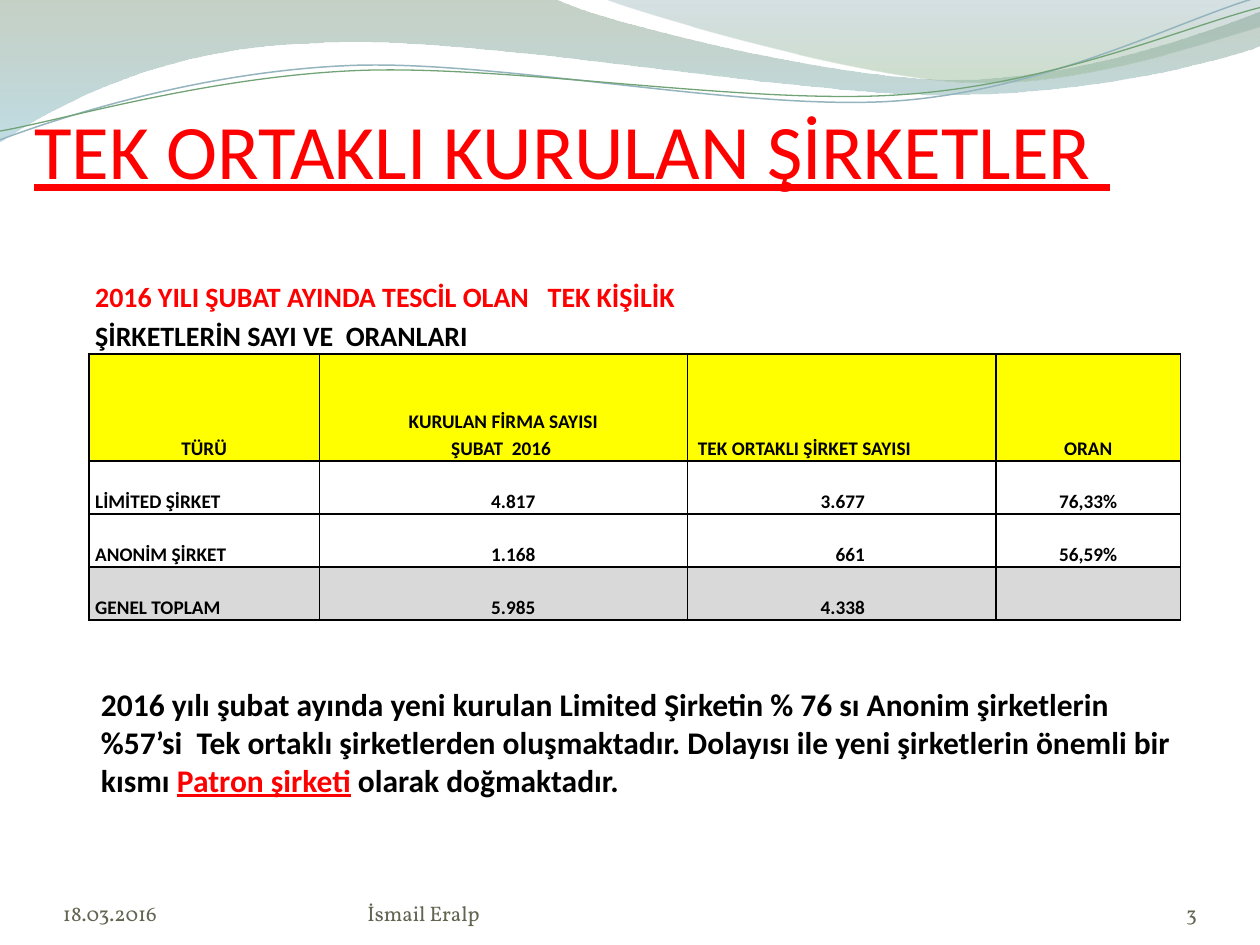
import math

import pptx
import pptx.dml.color
import pptx.enum.text
import pptx.oxml
import pptx.oxml.ns
import pptx.util

RGB = pptx.dml.color.RGBColor
ALIGN = pptx.enum.text.PP_ALIGN
ANCHOR = pptx.enum.text.MSO_ANCHOR
FIT = pptx.enum.text.MSO_AUTO_SIZE
A_NS = pptx.oxml.ns.nsdecls("a")

RED = RGB(0xFF, 0x00, 0x00)
BLACK = RGB(0x00, 0x00, 0x00)
YELLOW = RGB(0xFF, 0xFF, 0x00)
GREY = RGB(0xD9, 0xD9, 0xD9)
OLIVE = RGB(0x62, 0x65, 0x51)
SAGE = RGB(0x80, 0x99, 0x80)
SKY = RGB(0x8D, 0xC1, 0xCF)
STEEL = RGB(0x77, 0x9B, 0xA4)
MINT = RGB(0x96, 0xB9, 0x96)
PALE_BLUE = RGB(0x94, 0xB5, 0xBE)
GREEN = RGB(0x72, 0xA3, 0x76)

deck = pptx.Presentation()
deck.slide_width = pptx.util.Inches(10)
deck.slide_height = pptx.util.Inches(7.5)
slide = deck.slides.add_slide(deck.slide_layouts[5])

# Grid of 100 columns by 75 rows
COL = deck.slide_width // 100
ROW = deck.slide_height // 75


def box(left, top, width, height):
    return [round(n) for n in (left * COL, top * ROW, width * COL, height * ROW)]


def add_run(paragraph, text, size, color, font="Calibri", bold=False, underline=False):
    run = paragraph.add_run()
    run.text = text
    run.font.size = pptx.util.Pt(size)
    run.font.name = font
    run.font.bold = bold
    run.font.underline = underline
    run.font.color.rgb = color


# Waves: two numbers make a straight side, six make a Bezier curve
broad_wave = [
    (0, 0), (44, -0.1), (47.6, 1.7, 66.4, 6.3, 75.8, 6.3),
    (85.3, 6.3, 95.8, 2.6, 100, 0.9), (100.1, 3.6),
    (98.3, 4.4, 87, 7.6, 74.6, 7.5), (62.2, 7.5, 38.2, 2.8, 25.7, 3.4),
    (12.9, 3.6, 4.6, 8.3, -0.1, 11.3),
]
right_wave = [
    (47.9, -0.1), (50.9, 1.1, 68.2, 6.2, 76.9, 6.5),
    (85.6, 6.9, 96.1, 3.2, 100, 2.1), (100, 0),
]
blue_thread = [
    (0, 11.1), (4.8, 9.3, 15.8, 5.7, 27.7, 5.2),
    (39.5, 4.7, 59.3, 8.9, 71.3, 8), (83.3, 7.1, 93.8, 1.5, 99.8, -0.2),
]
green_thread = [
    (0, 10.4), (4.7, 9.6, 16.4, 6.1, 28.3, 5.6),
    (40.3, 5.1, 59.7, 8.4, 71.7, 7.5), (83.6, 6.7, 94.1, 2.1, 100, 0.6),
]
for outline, tilt, pivot, stops, thread in [
    (broad_wave, 0, (0, 0), [(0, SAGE, 45), (1, SKY, 55)], None),
    (right_wave, 0, (0, 0), [(0, STEEL, 30), (0.8, MINT, 45)], None),
    (blue_thread, 2.7, (49.9, 5.75), None, (PALE_BLUE, 0.85)),
    (green_thread, 2.7, (49.95, 5.9), None, (GREEN, 0.75)),
]:
    # Points are levelled here; the shape's rotation tilts them again
    cos, sin = math.cos(math.radians(tilt)), math.sin(math.radians(tilt))
    points = []
    for segment in outline:
        for x, y in zip(segment[::2], segment[1::2]):
            dx, dy = x - pivot[0], y - pivot[1]
            points.append((round((pivot[0] + dx * cos - dy * sin) * COL),
                           round((pivot[1] + dx * sin + dy * cos) * ROW)))
    builder = slide.shapes.build_freeform(*points[0])
    builder.add_line_segments(points[1:], close=stops is not None)
    wave = builder.convert_to_shape()
    wave.rotation = -tilt
    wave.shadow.inherit = False

    # Gather each three points of a curve into one Bezier segment
    sides = iter(list(wave.element.iter(pptx.oxml.ns.qn("a:lnTo"))))
    for segment in outline[1:]:
        side = next(sides)
        if len(segment) == 6:
            curve = pptx.oxml.parse_xml(f"<a:cubicBezTo {A_NS}/>")
            side.addprevious(curve)
            for part in (side, next(sides), next(sides)):
                curve.append(part[0])
                part.getparent().remove(part)

    if stops:
        wave.line.fill.background()
        wave.fill.gradient()
        wave.fill.gradient_angle = 270
        for stop, (position, color, opacity) in zip(wave.fill.gradient_stops, stops):
            stop.position = position
            stop.color.rgb = color
        for tint, (position, color, opacity) in zip(
                wave.element.spPr.iter(pptx.oxml.ns.qn("a:srgbClr")), stops):
            tint.append(pptx.oxml.parse_xml(f'<a:alpha {A_NS} val="{opacity * 1000}"/>'))
    else:
        wave.fill.background()
        wave.line.color.rgb = thread[0]
        wave.line.width = pptx.util.Pt(thread[1])

# Title, in front of the waves
title = slide.shapes.title
slide.shapes.element.append(title.element)
title.left, title.top, title.width, title.height = box(0, 5.2, 90.8, 10.3)
heading = title.text_frame
heading.auto_size = FIT.NONE
heading.word_wrap = True
heading.vertical_anchor = ANCHOR.BOTTOM
heading.margin_left = heading.margin_right = heading.margin_bottom = 0
heading.paragraphs[0].alignment = ALIGN.CENTER
add_run(heading.paragraphs[0], "TEK ORTAKLI KURULAN ŞİRKETLER ", 44, RED, underline=True)

# Company table: one list per row, lines of a cell parted by \n
rows = [
    ["2016 YILI ŞUBAT AYINDA TESCİL OLAN   TEK KİŞİLİK\nŞİRKETLERİN SAYI VE  ORANLARI",
     "", "", ""],
    ["TÜRÜ", " KURULAN FİRMA SAYISI \nŞUBAT  2016 ", " TEK ORTAKLI ŞİRKET SAYISI", " ORAN "],
    ["LİMİTED ŞİRKET", "4.817", "3.677", "76,33%"],
    ["ANONİM ŞİRKET", "1.168", "661", "56,59%"],
    ["GENEL TOPLAM", "5.985", "4.338", ""],
]
row_fills = [None, YELLOW, None, None, GREY]
header_aligns = [ALIGN.CENTER, ALIGN.CENTER, ALIGN.LEFT, ALIGN.CENTER]
figure_aligns = [ALIGN.LEFT, ALIGN.RIGHT, ALIGN.RIGHT, ALIGN.CENTER]
figure_insets = [0.5, 12.05, 10.4, 0.5]

companies = slide.shapes.add_table(5, 4, *box(7.05, 21.85, 86.7, 27.3)).table
companies.first_row = companies.horz_banding = False
for column, width in zip(companies.columns, [18.3, 29.2, 24.5, 14.65]):
    column.width = round(width * COL)
for row, height in zip(companies.rows, [6.2, 8.5, 4.2, 4.2, 4.2]):
    row.height = round(height * ROW)

for r, texts in enumerate(rows):
    for c, text in enumerate(texts):
        cell = companies.cell(r, c)
        for side in "LRTB":
            shown = r > 0 or side == "B"
            paint = ('<a:solidFill><a:srgbClr val="000000"/></a:solidFill>'
                     if shown else "<a:noFill/>")
            cell._tc.get_or_add_tcPr().append(pptx.oxml.parse_xml(
                f'<a:ln{side} {A_NS} w="12700">{paint}</a:ln{side}>'))
        if row_fills[r] is None:
            cell.fill.background()
        else:
            cell.fill.solid()
            cell.fill.fore_color.rgb = row_fills[r]
        cell.vertical_anchor = ANCHOR.BOTTOM
        cell.margin_top = cell.margin_bottom = 0
        cell.margin_left = COL // 2
        cell.margin_right = round((figure_insets[c] if r > 1 else 0.5) * COL)
        if not text:
            continue
        for i, line in enumerate(text.split("\n")):
            paragraph = cell.text_frame.paragraphs[0] if i == 0 else cell.text_frame.add_paragraph()
            paragraph.line_spacing = 1.15
            if r > 0:
                paragraph.alignment = (header_aligns if r == 1 else figure_aligns)[c]
            add_run(paragraph, line, 16 if r == 0 else 11,
                    RED if r == 0 and i == 0 else BLACK, bold=True)
companies.cell(0, 0).merge(companies.cell(0, 2))

# Conclusion
conclusion = slide.shapes.add_textbox(*box(7.03, 53.9, 87.5, 10.1)).text_frame
conclusion.word_wrap = True
conclusion.auto_size = FIT.SHAPE_TO_FIT_TEXT
for text, color, underline in [
    ("2016 yılı şubat ayında yeni kurulan Limited Şirketin % 76 sı Anonim şirketlerin "
     "%57’si  Tek ortaklı şirketlerden oluşmaktadır. Dolayısı ile yeni şirketlerin "
     "önemli bir kısmı ", BLACK, False),
    ("Patron şirketi", RED, True),
    (" olarak doğmaktadır.", BLACK, False),
]:
    add_run(conclusion.paragraphs[0], text, 18, color, bold=True, underline=underline)

# Footer: page number, date, author
for text, left, width, align in [
    ("3", 86.7, 8.3, ALIGN.RIGHT),
    ("18.03.2016", 5, 23.3, ALIGN.LEFT),
    ("İsmail Eralp", 29.17, 36.7, ALIGN.LEFT),
]:
    footer = slide.shapes.add_textbox(*box(left, 69.5, width, 4)).text_frame
    footer.word_wrap = True
    footer.vertical_anchor = ANCHOR.BOTTOM
    footer.margin_left = footer.margin_right = footer.margin_top = footer.margin_bottom = 0
    footer.paragraphs[0].alignment = align
    add_run(footer.paragraphs[0], text, 12, OLIVE, font="Vollkorn")

deck.save("out.pptx")
